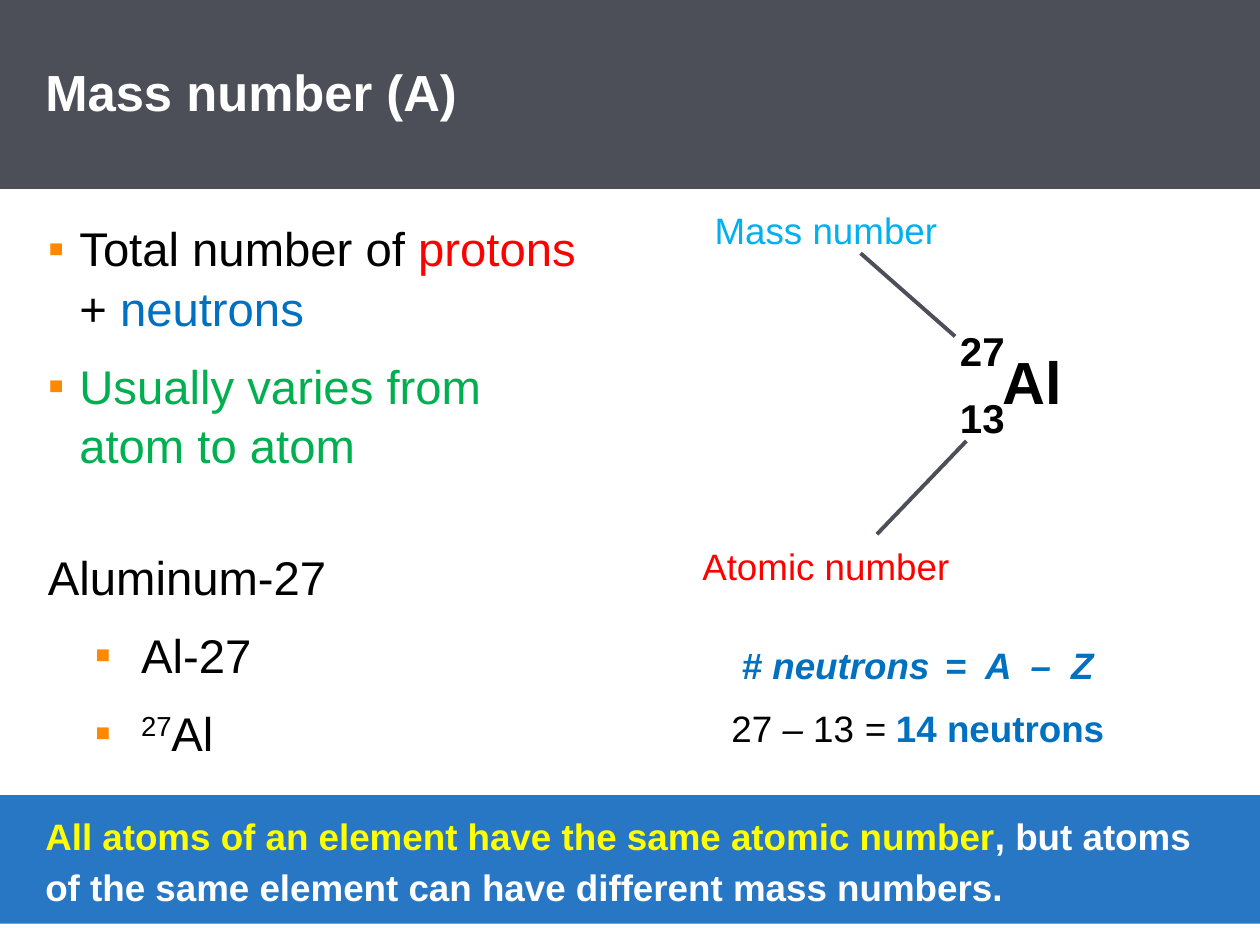
from dataclasses import dataclass

from lxml.etree import SubElement
from pptx import Presentation
from pptx.dml.color import RGBColor
from pptx.enum.shapes import MSO_CONNECTOR, MSO_SHAPE
from pptx.enum.text import MSO_ANCHOR, PP_ALIGN
from pptx.oxml.ns import qn
from pptx.util import Inches, Pt


@dataclass(frozen=True)
class Theme:
    font: str = "Arial"
    black: str = "000000"
    white: str = "FFFFFF"
    slate: str = "4D4F58"
    banner: str = "2877C4"
    orange: str = "FE8900"
    red: str = "FF0000"
    blue: str = "0070C0"
    sky: str = "00B0F0"
    green: str = "00B050"
    yellow: str = "FFFF00"
    title_size: float = 29
    body_size: float = 27
    label_size: float = 21
    symbol_size: float = 34
    index_size: float = 23
    leading: float = 1.05
    body_gap: float = 10.5
    row_gap: float = 9.66
    line_width: float = 2.25


THEME = Theme()


def add_span(para, text, *, size, color=THEME.black, bold=False, italic=False,
             raised=0, tracking=0):
    """Add a formatted run; raised is in percent, tracking in points."""
    span = para.add_run()
    span.text = text
    font = span.font
    font.name, font.size = THEME.font, Pt(size)
    font.bold, font.italic = bold, italic
    font.color.rgb = RGBColor.from_string(color)
    properties = font._element
    if raised:
        properties.set("baseline", str(raised * 1000))
    if tracking:
        properties.set("spc", str(round(tracking * 100)))


class SlideBuilder:
    def __init__(self, slide, theme):
        self.slide = slide
        self.theme = theme

    def frame(self, box, margins=(0.1, 0.05, 0.1, 0.05),
              anchor=MSO_ANCHOR.TOP, wrap=True):
        frame = box.text_frame
        frame.word_wrap = wrap
        frame.vertical_anchor = anchor
        (frame.margin_left, frame.margin_top,
         frame.margin_right, frame.margin_bottom) = map(Inches, margins)
        return frame

    def text(self, place, **layout):
        box = self.slide.shapes.add_textbox(*map(Inches, place))
        return self.frame(box, **layout)

    def band(self, place, fill, **layout):
        box = self.slide.shapes.add_shape(MSO_SHAPE.RECTANGLE, *map(Inches, place))
        box.shadow.inherit = False
        box.fill.solid()
        box.fill.fore_color.rgb = RGBColor.from_string(fill)
        box.line.fill.background()
        return self.frame(box, **layout)

    def para(self, frame, spans, *, size, align=PP_ALIGN.LEFT, before=0,
             leading=None, bullet_indent=None):
        """Add a paragraph of (text, format) pairs; bullet_indent is (left, hang)."""
        para = frame.paragraphs[0]
        if para.runs:
            para = frame.add_paragraph()
        para.alignment = align
        para.line_spacing = leading or self.theme.leading
        para.space_before = Pt(before)
        if bullet_indent:
            self.bullet(para, *bullet_indent)
        for text, style in spans:
            add_span(para, text, size=size, **style)

    def bullet(self, para, left, hang):
        properties = para._p.get_or_add_pPr()
        properties.set("marL", str(Inches(left)))
        properties.set("indent", str(-Inches(hang)))
        color = SubElement(properties, qn("a:buClr"))
        SubElement(color, qn("a:srgbClr"), val=self.theme.orange)
        SubElement(properties, qn("a:buFont"), typeface=self.theme.font)
        SubElement(properties, qn("a:buChar"), char="▪")

    def line(self, start, end):
        line = self.slide.shapes.add_connector(
            MSO_CONNECTOR.STRAIGHT, *map(Inches, start + end))
        line.line.color.rgb = RGBColor.from_string(self.theme.slate)
        line.line.width = Pt(self.theme.line_width)
        SubElement(line._element.spPr, qn("a:effectLst"))


def main():
    theme = THEME
    deck = Presentation()
    deck.slide_width, deck.slide_height = Inches(10), Inches(7.5)
    page = SlideBuilder(deck.slides.add_slide(deck.slide_layouts[6]), theme)

    # Definition and notation list
    body = page.text((0, 1.51, 4.65, 5.99), margins=(0.38, 0.21, 0, 0.21))
    outer, inner = (0.25, 0.25), (0.74, 0.37)
    section_gap = 41
    for spans, indent, before in (
        ([("Total number of ", {}), ("protons", {"color": theme.red}),
          (" + ", {}), ("neutrons", {"color": theme.blue})], outer, theme.body_gap),
        ([("Usually varies from atom to atom", {"color": theme.green})],
         outer, theme.body_gap),
        ([("Aluminum-27", {})], None, section_gap),
        ([("Al-27", {})], inner, theme.body_gap),
        ([("27", {"raised": 30}), ("Al", {})], inner, theme.body_gap),
    ):
        page.para(body, spans, size=theme.body_size, before=before,
                  bullet_indent=indent)

    # Title band
    title = page.band((0, 0, 10, 1.5), theme.slate,
                      margins=(0.36, 0.15, 0.36, 0.15), anchor=MSO_ANCHOR.MIDDLE)
    page.para(title, [("Mass number (A)", {"color": theme.white, "bold": True})],
              size=theme.title_size, leading=0.95)

    # Conclusion banner
    banner = page.band((0, 6.31, 10, 1.02), theme.banner,
                       margins=(0.36, 0.1, 0.36, 0.1))
    page.para(banner, [
        ("All atoms of an element have the same atomic number",
         {"color": theme.yellow, "bold": True}),
        (", but atoms of the same element can have different mass numbers.",
         {"color": theme.white, "bold": True}),
    ], size=theme.label_size, before=4.2, leading=1.15)

    # Nuclide symbol with its two indices
    symbol = page.text((7.86, 2.66, 0.84, 0.67))
    page.para(symbol, [("Al", {"bold": True})], size=theme.symbol_size)
    indices = page.text((7.52, 2.52, 0.56, 1.01), wrap=False)
    for number, before in (("27", 0), ("13", theme.row_gap)):
        page.para(indices, [(number, {"bold": True})], size=theme.index_size,
                  before=before)

    # Index labels and their pointers
    for label, color, top, start, end in (
        ("Atomic number", theme.red, 4.25, (6.96, 4.24), (7.67, 3.5)),
        ("Mass number", theme.sky, 1.58, (6.83, 2.01), (7.58, 2.67)),
    ):
        caption = page.text((5.22, top, 2.67, 0.45))
        page.para(caption, [(label, {"color": color})], size=theme.label_size,
                  align=PP_ALIGN.CENTER)
        page.line(start, end)

    # Neutron formula and worked example
    formula = page.text((5.27, 4.98, 4.03, 1.05), margins=(0.21, 0.1, 0.21, 0.1))
    strong = {"color": theme.blue, "bold": True}
    slanted = {"italic": True}
    for spans, before in (
        ([("# neutrons", strong | slanted),
          (" = A – Z", strong | slanted | {"tracking": 2.9})], 0),
        ([("27 ", {}), ("–", slanted), (" 13 ", {}), ("= ", slanted),
          ("14 neutrons", strong)], theme.row_gap),
    ):
        page.para(formula, spans, size=theme.label_size,
                  align=PP_ALIGN.CENTER, before=before)

    deck.save("out.pptx")


if __name__ == "__main__":
    main()
